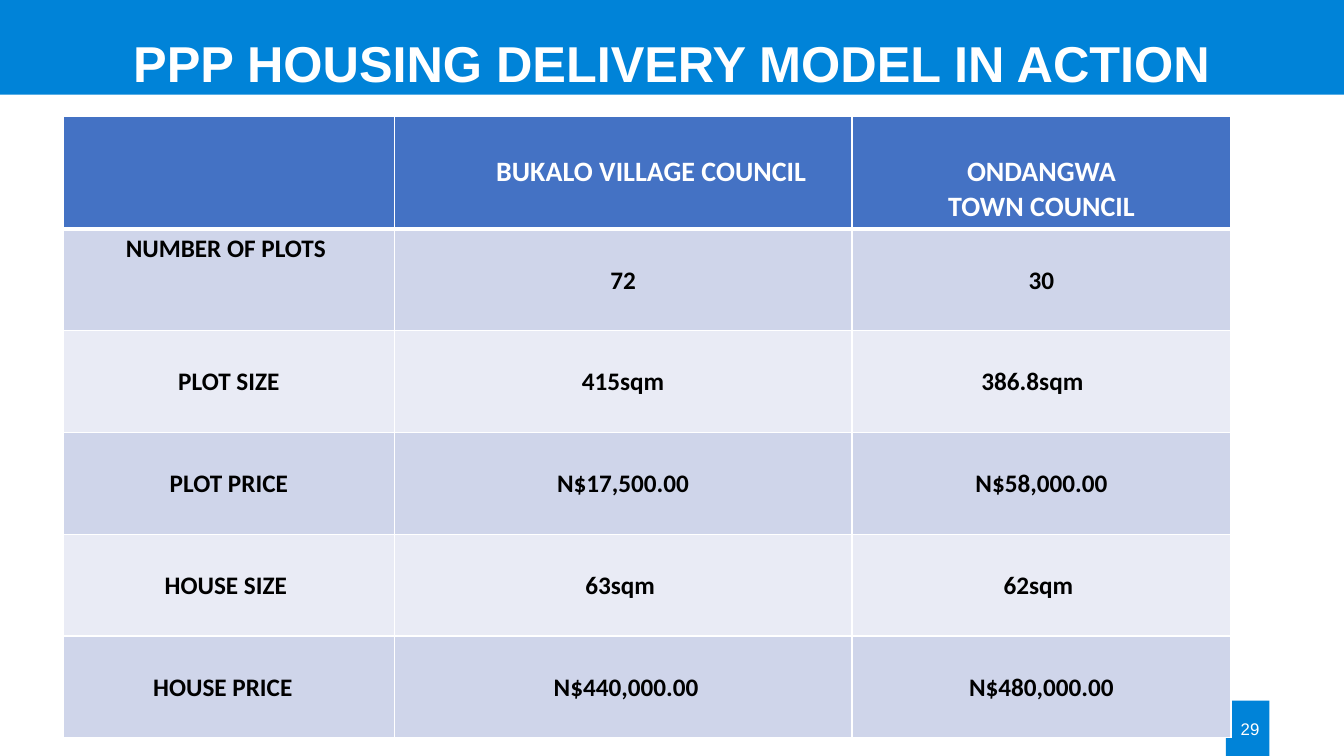
from pptx import Presentation
from pptx.dml.color import RGBColor
from pptx.enum.shapes import MSO_SHAPE
from pptx.enum.text import MSO_ANCHOR, PP_ALIGN
from pptx.oxml.ns import qn
from pptx.util import Inches, Pt
from lxml import etree

RECTANGLE = MSO_SHAPE.RECTANGLE
MIDDLE = MSO_ANCHOR.MIDDLE
CENTER, RIGHT = PP_ALIGN.CENTER, PP_ALIGN.RIGHT

COLOURS = {"banner": "0083D8", "header": "4472C4", "odd": "CFD5EA",
           "even": "E9EBF5", "white": "FFFFFF", "black": "000000"}

TITLE = {"name": "Arial", "size": Pt(36), "bold": True}
NUMBER = {"name": "Arial", "size": Pt(12), "bold": False}
HEADING = {"name": "Calibri", "size": Pt(20), "bold": True}
BODY = {"name": "Calibri", "size": Pt(18), "bold": True}

ROWS = [
    ["", "BUKALO VILLAGE COUNCIL", "ONDANGWA\nTOWN COUNCIL"],
    ["NUMBER OF PLOTS", "72", "30"],
    ["PLOT SIZE", "415sqm", "386.8sqm"],
    ["PLOT PRICE", "N$17,500.00", "N$58,000.00"],
    ["HOUSE SIZE", "63sqm", "62sqm"],
    ["HOUSE PRICE", "N$440,000.00", "N$480,000.00"],
]
COLUMN_WIDTHS = [3.28, 4.54, 3.76]
HEADER_HEIGHT, ROW_HEIGHT = 1.12, 1.01
SIDE_MARGIN, TOP_MARGIN = 0.1, 0.05
HEADER_DROP, BODY_DROP = 0.34, 0.31

# Sideways offset of a cell's text from the middle of its column
SHIFTS = {"BUKALO VILLAGE COUNCIL": 0.28, "386.8sqm": -0.09,
          "NUMBER OF PLOTS": -0.03, "HOUSE SIZE": -0.03, "63sqm": -0.03,
          "62sqm": -0.03, "HOUSE PRICE": -0.06, "N$440,000.00": 0.03}


def colour(name):
    return RGBColor.from_string(COLOURS[name])


def write(frame, text, font, tint, align, spacing=None):
    for index, line in enumerate(text.split("\n")):
        para = frame.add_paragraph() if index else frame.paragraphs[0]
        para.alignment = align
        para.line_spacing = spacing
        span = para.add_run()
        span.text = line
        for key, value in font.items():
            setattr(span.font, key, value)
        span.font.color.rgb = colour(tint)


def add_block(page, place, text, font, align, spacing=None):
    box = page.shapes.add_shape(RECTANGLE, *map(Inches, place))
    box.shadow.inherit = False
    box.fill.solid()
    box.fill.fore_color.rgb = colour("banner")
    box.line.fill.background()
    box.text_frame.word_wrap = True
    box.text_frame.vertical_anchor = MIDDLE
    write(box.text_frame, text, font, "white", align, spacing)


def add_borders(cell, widths):
    properties = cell._tc.get_or_add_tcPr()
    for side, width in widths.items():
        line = etree.SubElement(properties, qn("a:ln" + side), w=str(Pt(width)))
        fill = etree.SubElement(line, qn("a:solidFill"))
        etree.SubElement(fill, qn("a:srgbClr"), val=COLOURS["white"])


def format_cell(cell, row, column):
    text = ROWS[row][column]
    # Borders, with a heavy rule under the header
    add_borders(cell, {"L": 1, "R": 1, "T": 3 if row == 1 else 1,
                       "B": 3 if row == 0 else 1})
    cell.fill.solid()
    band = "header" if row == 0 else "odd" if row % 2 else "even"
    cell.fill.fore_color.rgb = colour(band)
    # Text sits one line down, except in the first row label
    drop = BODY_DROP if row else HEADER_DROP
    if (row, column) == (1, 0):
        drop = 0
    shift = SHIFTS.get(text, 0)
    cell.margin_top = Inches(TOP_MARGIN + drop)
    cell.margin_left = Inches(SIDE_MARGIN + max(2 * shift, 0))
    cell.margin_right = Inches(SIDE_MARGIN + max(-2 * shift, 0))
    if text:
        write(cell.text_frame, text, BODY if row else HEADING,
              "black" if row else "white", CENTER)


def add_comparison(page, left, top):
    heights = [HEADER_HEIGHT] + [ROW_HEIGHT] * (len(ROWS) - 1)
    frame = page.shapes.add_table(
        len(ROWS), len(COLUMN_WIDTHS), Inches(left), Inches(top),
        Inches(sum(COLUMN_WIDTHS)), Inches(sum(heights)))
    table = frame.table
    table.horz_banding = False
    for column, width in zip(table.columns, COLUMN_WIDTHS):
        column.width = Inches(width)
    for row, height in zip(table.rows, heights):
        row.height = Inches(height)
    for row in range(len(ROWS)):
        for column in range(len(COLUMN_WIDTHS)):
            format_cell(table.cell(row, column), row, column)


def main():
    deck = Presentation()
    deck.slide_width, deck.slide_height = Inches(13.33), Inches(7.5)
    page = deck.slides.add_slide(deck.slide_layouts[6])
    # Page number, title banner and table
    add_block(page, (12.16, 6.95, 0.43, 0.55), "29", NUMBER, RIGHT)
    add_block(page, (0, 0, 13.33, 0.94),
              "PPP HOUSING DELIVERY MODEL IN ACTION", TITLE, CENTER, 1.5)
    add_comparison(page, 0.63, 1.15)
    deck.save("out.pptx")


if __name__ == "__main__":
    main()
